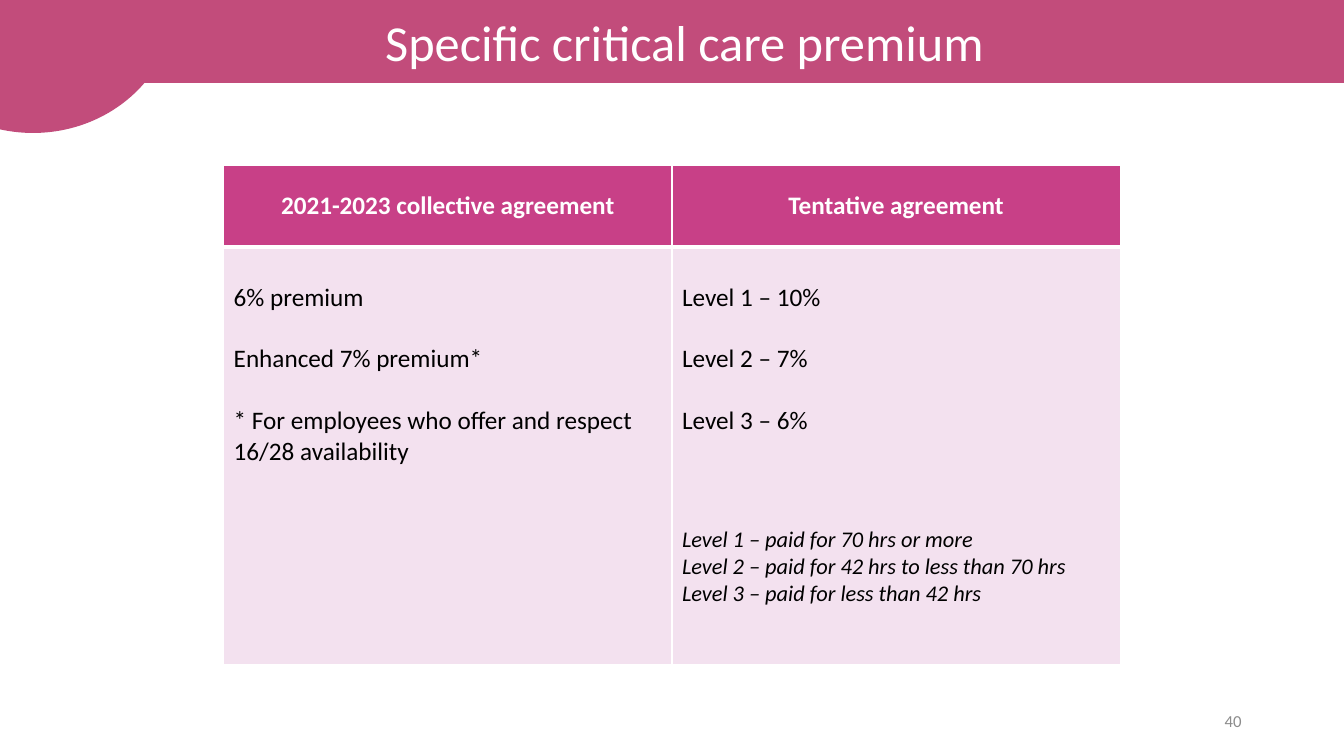
from dataclasses import dataclass

from lxml.etree import SubElement
from pptx import Presentation
from pptx.dml.color import RGBColor
from pptx.enum.shapes import MSO_SHAPE as Shape
from pptx.enum.text import MSO_ANCHOR as Anchor, PP_ALIGN as Align
from pptx.oxml.ns import qn
from pptx.util import Pt

PX = 9525  # EMU in one px, 96 px to the inch


@dataclass(frozen=True)
class Theme:
    font: str = "Calibri"
    banner: str = "C24C7B"
    header: str = "C84087"
    body: str = "F3E1EF"
    white: str = "FFFFFF"
    black: str = "000000"
    grey: str = "8C8C8C"
    title_size: int = 36
    text_size: int = 18
    note_size: int = 16
    number_size: int = 12


theme = Theme()


def write(para, text, size=theme.text_size, color=theme.black, bold=False,
          italic=False, align=Align.LEFT, before=0):
    """Fill a paragraph with one formatted span."""
    para.alignment = align
    para.space_before = Pt(before)
    span = para.add_run()
    span.text = text
    font = span.font
    font.name, font.size, font.bold, font.italic = theme.font, Pt(size), bold, italic
    font.color.rgb = RGBColor.from_string(color)


def paint(cell, color, bottom):
    """Give a cell white borders, then its fill."""
    properties = cell._tc.get_or_add_tcPr()
    for side, width in (("L", 1), ("R", 1), ("T", 1), ("B", bottom)):
        line = SubElement(properties, qn(f"a:ln{side}"), w=str(Pt(width)))
        SubElement(SubElement(line, qn("a:solidFill")), qn("a:srgbClr"), val=theme.white)
    cell.fill.solid()
    cell.fill.fore_color.rgb = RGBColor.from_string(color)


deck = Presentation()
deck.slide_width, deck.slide_height = 1280 * PX, 720 * PX
page = deck.slides.add_slide(deck.slide_layouts[5])

# Title banner, with the round corner over its left end
banner = page.shapes.title
banner.left, banner.top, banner.width, banner.height = 0, 0, 1304 * PX, 78 * PX
banner.text_frame.vertical_anchor = Anchor.MIDDLE
write(banner.text_frame.paragraphs[0], "Specific critical care premium",
      size=theme.title_size, color=theme.white, align=Align.CENTER)
corner = page.shapes.add_shape(Shape.OVAL, -104 * PX, -128 * PX, 271 * PX, 254 * PX)
corner.shadow.inherit = False
for shape in (banner, corner):
    shape.fill.solid()
    shape.fill.fore_color.rgb = RGBColor.from_string(theme.banner)
    shape.line.color.rgb = RGBColor.from_string(theme.banner)
    shape.line.width = Pt(1)

# Slide number
box = page.shapes.add_textbox(904 * PX, 667 * PX, 288 * PX, 38 * PX)
box.text_frame.word_wrap = True
box.text_frame.vertical_anchor = Anchor.MIDDLE
write(box.text_frame.paragraphs[0], "40", size=theme.number_size,
      color=theme.grey, align=Align.RIGHT)

# Agreement table: each column has a heading, spaced lines and closing notes
columns = [
    ("2021-2023 collective agreement",
     ["6% premium", "Enhanced 7% premium*",
      "* For employees who offer and respect 16/28 availability"],
     []),
    ("Tentative agreement",
     ["Level 1 – 10%", "Level 2 – 7%", "Level 3 – 6%"],
     ["Level 1 – paid for 70 hrs or more",
      "Level 2 – paid for 42 hrs to less than 70 hrs",
      "Level 3 – paid for less than 42 hrs"]),
]
LINE_GAP, NOTE_GAP = 22, 64  # points
table = page.shapes.add_table(2, 2, 213 * PX, 158 * PX, 854 * PX, 475 * PX).table
table.rows[0].height, table.rows[1].height = 77 * PX, 398 * PX

for index, (heading, lines, notes) in enumerate(columns):
    table.columns[index].width = 427 * PX
    top, body = table.cell(0, index), table.cell(1, index)
    paint(top, theme.header, bottom=3)
    paint(body, theme.body, bottom=1)

    top.vertical_anchor = Anchor.MIDDLE
    write(top.text_frame.paragraphs[0], heading, color=theme.white,
          bold=True, align=Align.CENTER)

    body.margin_top = 34 * PX
    frame = body.text_frame
    for row, text in enumerate(lines):
        para = frame.add_paragraph() if row else frame.paragraphs[0]
        write(para, text, before=LINE_GAP if row else 0)
    for row, text in enumerate(notes):
        write(frame.add_paragraph(), text, size=theme.note_size, italic=True,
              before=0 if row else NOTE_GAP)

deck.save("out.pptx")
